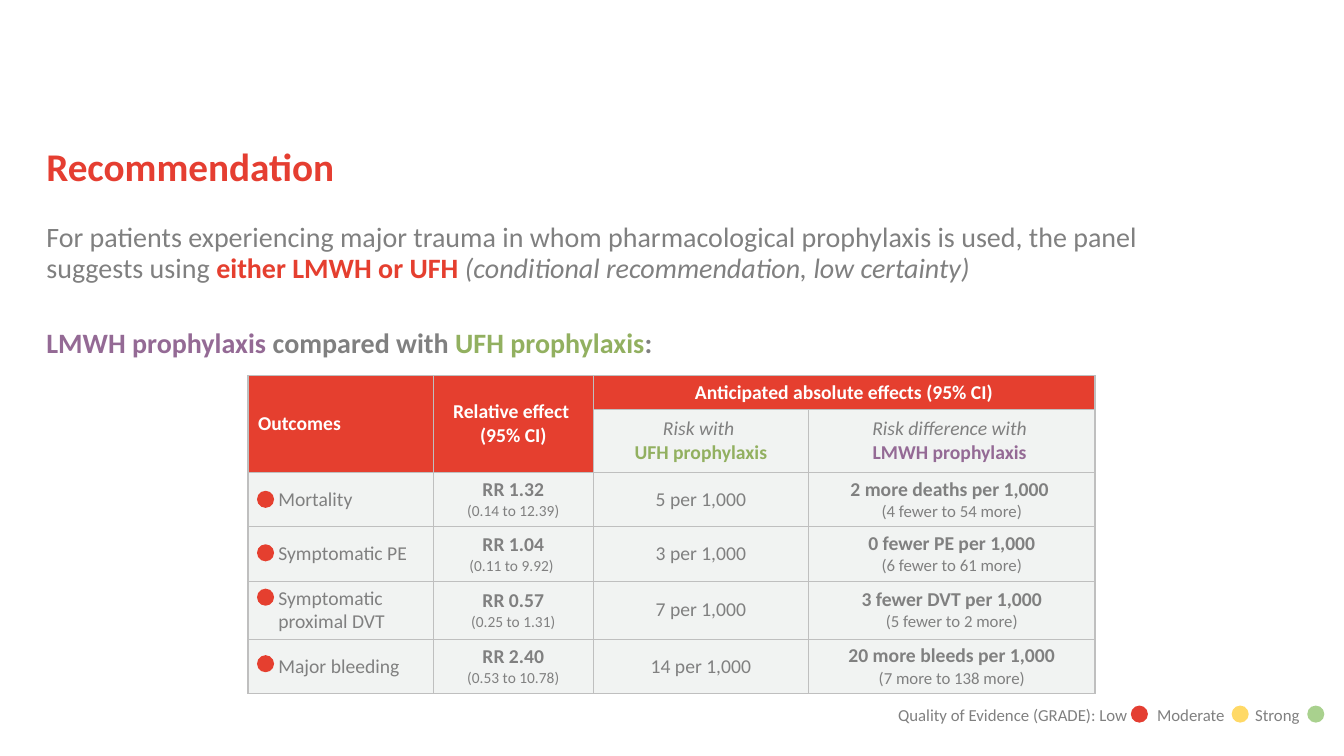
from lxml import etree
from pptx import Presentation
from pptx.dml import color
from pptx.enum import shapes, text
from pptx.oxml import ns
from pptx.util import Pt

RED, GREY, PURPLE, GREEN = "E53F2F", "808080", "946A95", "92B060"
WHITE, PALE, BORDER = "FFFFFF", "F1F3F2", "BFBFBF"
CENTER = text.PP_ALIGN.CENTER
hex_color = color.RGBColor.from_string


def add_runs(paragraph, runs):
    """Each run is wording, size, colour and style letters (b, i)."""
    for wording, size, ink, style in runs:
        run = paragraph.add_run()
        run.text = wording.rstrip("\n")
        run.font.name = "Calibri"
        run.font.size = Pt(size)
        run.font.color.rgb = hex_color(ink)
        run.font.bold = "b" in style
        run.font.italic = "i" in style
        if wording.endswith("\n"):
            paragraph.add_line_break()


def add_box(left, top, width, height):
    frame = slide.shapes.add_textbox(Pt(left), Pt(top), Pt(width), Pt(height)).text_frame
    frame.word_wrap = True
    frame.margin_left = frame.margin_right = frame.margin_top = frame.margin_bottom = 0
    return frame


prs = Presentation()
prs.slide_width, prs.slide_height = Pt(960), Pt(540)
slide = prs.slides.add_slide(prs.slide_layouts[6])

# Outcomes table: grid
columns = [132.5, 114, 154, 204.5]
rows = [23.7, 44.8, 38.8, 38.5, 40.6, 38.5]
outcomes = slide.shapes.add_table(
    len(rows), len(columns), Pt(177.2), Pt(268.4), Pt(sum(columns)), Pt(sum(rows))).table
for column, width in zip(outcomes.columns, columns):
    column.width = Pt(width)
for row, height in zip(outcomes.rows, rows):
    row.height = Pt(height)
outcomes.cell(0, 0).merge(outcomes.cell(1, 0))
outcomes.cell(0, 1).merge(outcomes.cell(1, 1))
outcomes.cell(0, 2).merge(outcomes.cell(0, 3))

# Outcomes table: wording, as paragraphs of runs for each cell
wording = {
    (0, 0): [[("Outcomes", 14, WHITE, "b")]],
    (0, 1): [[("Relative effect \n", 14, WHITE, "b"), ("(95% CI)", 14, WHITE, "b")]],
    (0, 2): [[("Anticipated absolute effects (95% CI)", 14, WHITE, "b")]],
    (1, 2): [[("Risk with \n", 14, GREY, "i"), ("UFH prophylaxis", 14, GREEN, "b")]],
    (1, 3): [[("Risk difference with \n", 14, GREY, "i"),
              ("LMWH prophylaxis ", 14, PURPLE, "b")]],
}
results = [
    ("Mortality", "RR 1.32", "(0.14 to 12.39)", "5 per 1,000",
     "2 more deaths per 1,000 ", "(4 fewer to 54 more)"),
    ("Symptomatic PE", "RR 1.04", "(0.11 to 9.92) ", "3 per 1,000",
     "0 fewer PE per 1,000", "(6 fewer to 61 more)"),
    ("Symptomatic proximal DVT", "RR 0.57", "(0.25 to 1.31)", "7 per 1,000",
     "3 fewer DVT per 1,000", "(5 fewer to 2 more)"),
    ("Major bleeding", "RR 2.40", "(0.53 to 10.78)", "14 per 1,000",
     "20 more bleeds per 1,000", "(7 more to 138 more)"),
]
for r, (outcome, ratio, ratio_ci, risk, difference, difference_ci) in enumerate(results, 2):
    wording[r, 0] = [[(outcome, 14, GREY, "")]]
    wording[r, 1] = [[(ratio, 14, GREY, "b")], [(ratio_ci, 11, GREY, "")]]
    wording[r, 2] = [[(risk, 14, GREY, "")]]
    wording[r, 3] = [[(difference, 14, GREY, "b")], [(difference_ci, 12, GREY, "")]]

# Outcomes table: cells
for r in range(len(rows)):
    for c in range(len(columns)):
        cell = outcomes.cell(r, c)
        cell.vertical_anchor = text.MSO_ANCHOR.MIDDLE
        if r > 1 and c == 0:
            cell.margin_left = Pt(21.6)
        for i, runs in enumerate(wording.get((r, c), [])):
            frame = cell.text_frame
            line = frame.add_paragraph() if i else frame.paragraphs[0]
            if c:
                line.alignment = CENTER
            add_runs(line, runs)
        properties = cell._tc.get_or_add_tcPr()
        for side in ("a:lnL", "a:lnR", "a:lnT", "a:lnB"):
            edge = etree.SubElement(properties, ns.qn(side), w=str(Pt(1)))
            edge_fill = etree.SubElement(edge, ns.qn("a:solidFill"))
            etree.SubElement(edge_fill, ns.qn("a:srgbClr"), val=BORDER)
        cell.fill.solid()
        header = r == 0 or (r == 1 and c < 2)
        cell.fill.fore_color.rgb = hex_color(RED if header else PALE)

# Title
title = add_box(33.1, 105.8, 864, 56).paragraphs[0]
title.line_spacing = 0.9
add_runs(title, [("Recommendation", 28, "E53E31", "b")])

# Recommendation and comparison heading
statement = add_box(33.1, 159.8, 841, 96.5)
advice = statement.paragraphs[0]
advice.line_spacing = 0.9
add_runs(advice, [
    ("For patients experiencing major trauma in whom pharmacological prophylaxis is used, "
     "the panel suggests using ", 20, GREY, ""),
    ("either LMWH or UFH ", 20, RED, "b"),
    ("(conditional recommendation, low certainty)", 20, GREY, "i")])
comparison = statement.add_paragraph()
comparison.line_spacing = 0.9
comparison.space_before = Pt(32)
add_runs(comparison, [
    ("LMWH prophylaxis ", 20, PURPLE, "b"), ("compared with ", 20, GREY, "b"),
    ("UFH prophylaxis", 20, GREEN, "b"), (":", 20, GREY, "b")])

# Evidence quality legend
legend = add_box(641.5, 503.3, 318, 15).paragraphs[0]
tab_stops = etree.SubElement(legend._p.get_or_add_pPr(), ns.qn("a:tabLst"))
for stop in (185, 255):
    etree.SubElement(tab_stops, ns.qn("a:tab"), pos=str(Pt(stop)), algn="l")
add_runs(legend, [("Quality of Evidence (GRADE): Low\tModerate\tStrong", 12, GREY, "")])

# Evidence dots: one for each outcome, then the legend
dots = [(183.6, top, RED) for top in (350.6, 388.8, 420.5, 468)]
dots += [(807.8, 504, "E43E32"), (879.8, 504, "FFD966"), (933.8, 504, "A9D18E")]
for left, top, quality in dots:
    dot = slide.shapes.add_shape(
        shapes.MSO_SHAPE.OVAL, Pt(left), Pt(top), Pt(12.2), Pt(12.2))
    dot.shadow.inherit = False
    dot.fill.solid()
    dot.fill.fore_color.rgb = hex_color(quality)
    dot.line.fill.background()

prs.save("out.pptx")
